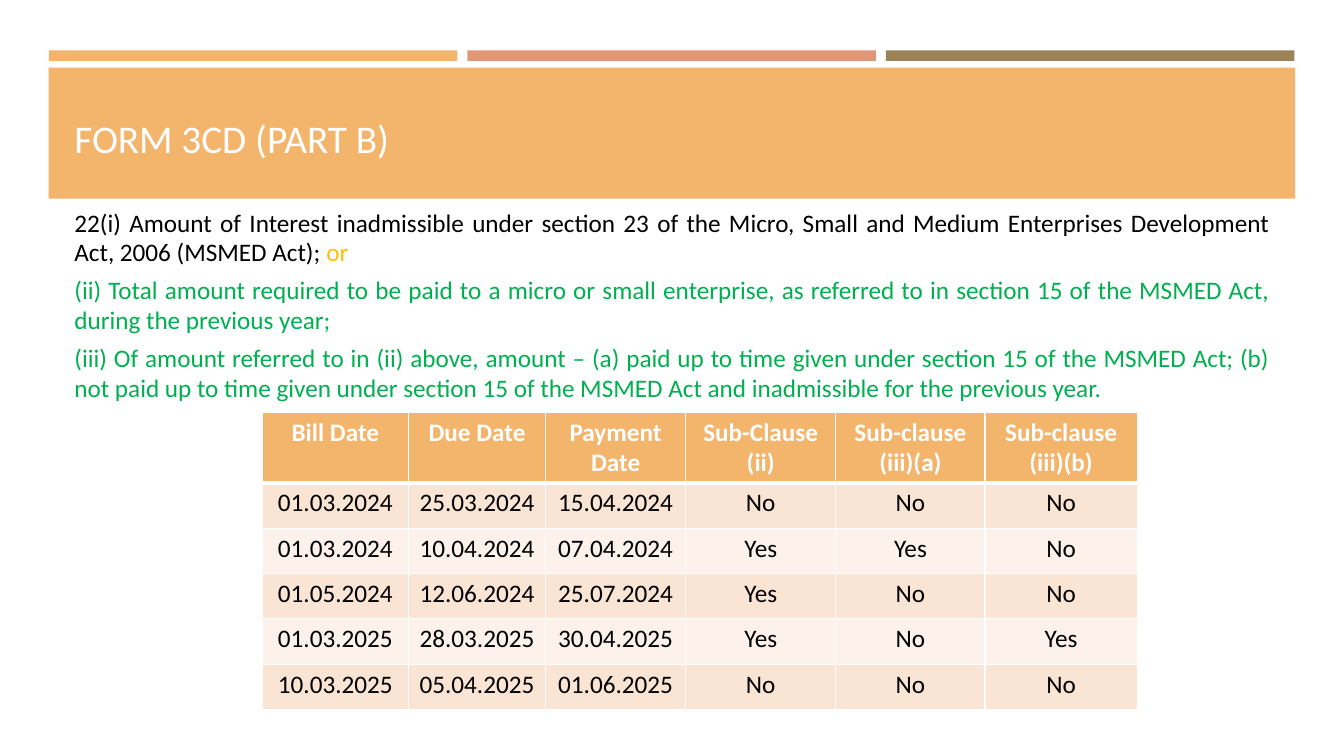
import pptx
import pptx.util
import pptx.dml.color
import pptx.enum.shapes
import pptx.enum.text
import pptx.oxml
import pptx.oxml.ns

Pt = pptx.util.Pt
RGBColor = pptx.dml.color.RGBColor
Align = pptx.enum.text.PP_ALIGN
Anchor = pptx.enum.text.MSO_ANCHOR

ORANGE = RGBColor(0xF3, 0xB4, 0x6C)
ROSE = RGBColor(0xDF, 0x97, 0x78)
BROWN = RGBColor(0x9B, 0x83, 0x57)
PEACH = RGBColor(0xFA, 0xE5, 0xD4)
CREAM = RGBColor(0xFD, 0xF2, 0xEB)
GOLD = RGBColor(0xFF, 0xC0, 0x00)
GREEN = RGBColor(0x00, 0xB0, 0x50)
BLACK = RGBColor(0, 0, 0)
WHITE = RGBColor(0xFF, 0xFF, 0xFF)
FACE = "Calibri"

CLAUSES = [
    [("22(i) Amount of Interest inadmissible under section 23 of the Micro, "
      "Small and Medium Enterprises Development Act, 2006 (MSMED Act); ", BLACK),
     ("or", GOLD)],
    [("(ii) Total amount required to be paid to a micro or small enterprise, as "
      "referred to in section 15 of the MSMED Act, during the previous year;", GREEN)],
    [("(iii) Of amount referred to in (ii) above, amount – (a) paid up to time "
      "given under section 15 of the MSMED Act; (b) not paid up to time given under "
      "section 15 of the MSMED Act and inadmissible for the previous year.", GREEN)],
]
BILLS = [
    ["Bill Date", "Due Date", "Payment Date", "Sub-Clause (ii)",
     "Sub-clause (iii)(a)", "Sub-clause (iii)(b)"],
    ["01.03.2024", "25.03.2024", "15.04.2024", "No", "No", "No"],
    ["01.03.2024", "10.04.2024", "07.04.2024", "Yes", "Yes", "No"],
    ["01.05.2024", "12.06.2024", "25.07.2024", "Yes", "No", "No"],
    ["01.03.2025", "28.03.2025", "30.04.2025", "Yes", "No", "Yes"],
    ["10.03.2025", "05.04.2025", "01.06.2025", "No", "No", "No"],
]
WIDTHS = [104.4, 97.9, 100.1, 107.3, 106.6, 108.7]


def add_block(slide, left, top, width, height, color):
    block = slide.shapes.add_shape(
        pptx.enum.shapes.MSO_SHAPE.RECTANGLE, Pt(left), Pt(top), Pt(width), Pt(height))
    block.shadow.inherit = False
    block.fill.solid()
    block.fill.fore_color.rgb = color
    block.line.fill.background()


def add_frame(slide, left, top, width, height, anchor):
    frame = slide.shapes.add_textbox(Pt(left), Pt(top), Pt(width), Pt(height)).text_frame
    frame.word_wrap = True
    frame.vertical_anchor = anchor
    return frame


def style(para, size, align):
    para.font.name = FACE
    para.font.size = Pt(size)
    para.alignment = align


def add_bars(slide, left, top, width, height):
    gap = 7.2
    bar = (width - 2 * gap) / 3
    for index, color in enumerate([ORANGE, ROSE, BROWN]):
        add_block(slide, left + index * (bar + gap), top, bar, height, color)


def add_title(slide, left, top, width, height):
    add_block(slide, left, top, width, height, ORANGE)
    frame = add_frame(slide, left + 11.3, top + 7.2, width - 22.6, 63.4, Anchor.BOTTOM)
    para = frame.paragraphs[0]
    para.text = "FORM 3CD (PART B)"
    style(para, 28, Align.LEFT)
    para.font.color.rgb = WHITE


def add_body(slide, left, top, width, height):
    frame = add_frame(slide, left, top, width, height, Anchor.TOP)
    for index, clause in enumerate(CLAUSES):
        para = frame.add_paragraph() if index else frame.paragraphs[0]
        style(para, 18, Align.JUSTIFY)
        para.space_after = Pt(6)
        para.line_spacing = 0.98
        for text, color in clause:
            run = para.add_run()
            run.text = text
            run.font.color.rgb = color


def add_border(cell, side, weight):
    xml = (f'<a:{side} {pptx.oxml.ns.nsdecls("a")} w="{Pt(weight)}">'
           f'<a:solidFill><a:srgbClr val="{WHITE}"/></a:solidFill></a:{side}>')
    cell._tc.get_or_add_tcPr().append(pptx.oxml.parse_xml(xml))


def fill_cell(cell, text, row):
    head = row == 0
    for side in ("lnL", "lnR", "lnT", "lnB"):
        thick = (head and side == "lnB") or (row == 1 and side == "lnT")
        add_border(cell, side, 3 if thick else 1)
    cell.fill.solid()
    cell.fill.fore_color.rgb = ORANGE if head else PEACH if row % 2 else CREAM
    cell.text = text
    para = cell.text_frame.paragraphs[0]
    style(para, 18, Align.CENTER)
    para.font.bold = head
    para.font.color.rgb = WHITE if head else BLACK


def add_bills(slide, left, top, width, height):
    table = slide.shapes.add_table(
        len(BILLS), len(WIDTHS), Pt(left), Pt(top), Pt(width), Pt(height)).table
    for column, size in zip(table.columns, WIDTHS):
        column.width = Pt(size)
    high = 50.4
    for row, texts in enumerate(BILLS):
        table.rows[row].height = Pt((height - high) / (len(BILLS) - 1) if row else high)
        for col, text in enumerate(texts):
            fill_cell(table.cell(row, col), text, row)


def main():
    deck = pptx.Presentation()
    deck.slide_width = Pt(960)
    deck.slide_height = Pt(540)
    slide = deck.slides.add_slide(deck.slide_layouts[6])
    add_bars(slide, 35, 36, 889.6, 7.5)
    add_title(slide, 34.8, 48.4, 890.4, 93.6)
    add_body(slide, 46.1, 145.4, 868.3, 350.6)
    add_bills(slide, 187.4, 294.4, sum(WIDTHS), 212.4)
    deck.save("out.pptx")


if __name__ == "__main__":
    main()
